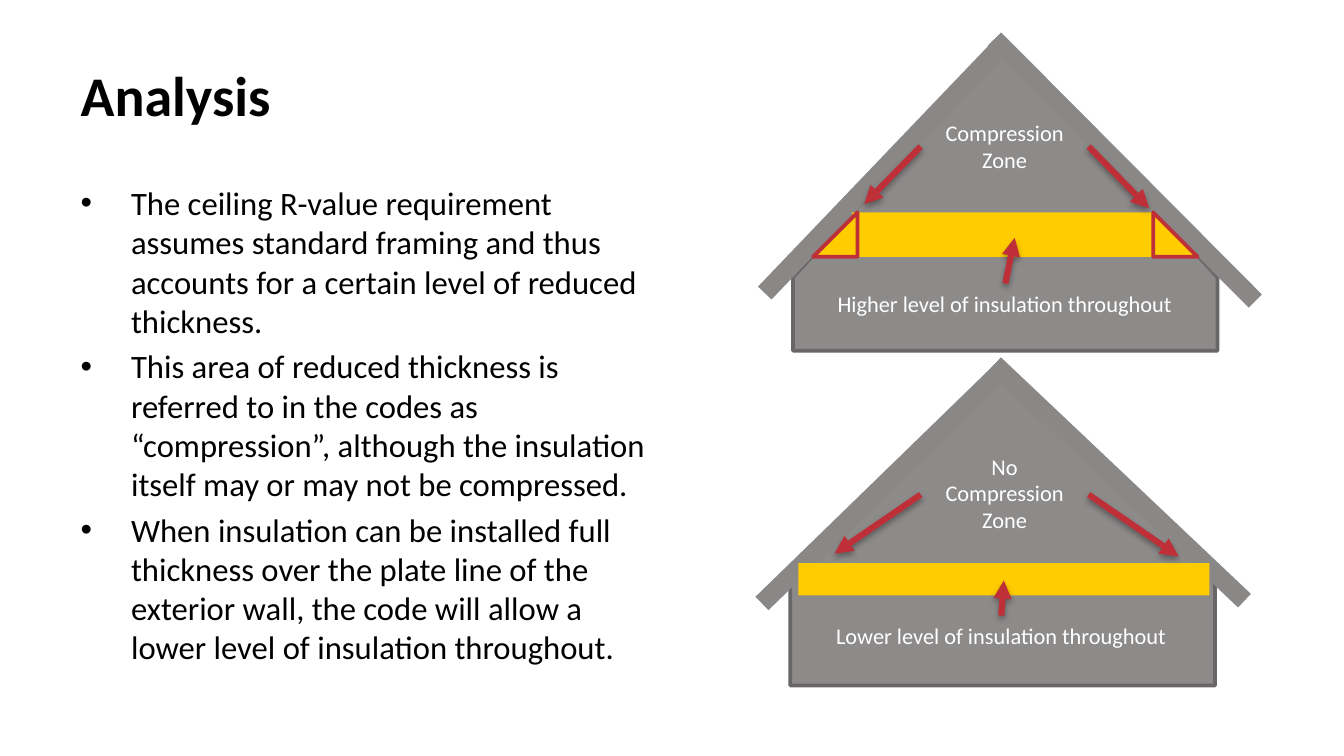
from lxml import etree
from pptx import Presentation
from pptx.dml.color import RGBColor
from pptx.enum import shapes, text
from pptx.oxml import parse_xml
from pptx.oxml.ns import nsdecls, qn
from pptx.util import Pt

rgb = RGBColor.from_string
BLACK, WHITE, WALL, WALL_EDGE = "000000", "FFFFFF", "8D8A8A", "686666"
ROOF, INSULATION, RED = "8A8787", "FFCC00", "BF2F38"

presentation = Presentation()
presentation.slide_width, presentation.slide_height = Pt(720), Pt(405)
slide = presentation.slides.add_slide(presentation.slide_layouts[1])


def add_shape(preset, box, fill, line=None):
    shape = slide.shapes.add_shape(preset, *map(Pt, box))
    shape.shadow.inherit = False
    shape.fill.solid()
    shape.fill.fore_color.rgb = rgb(fill)
    if line:
        shape.line.color.rgb = rgb(line)
        shape.line.width = Pt(2)
    else:
        shape.line.fill.background()
    return shape


def add_line(points, color, width, arrow=False):
    connector = slide.shapes.add_connector(
        shapes.MSO_CONNECTOR.STRAIGHT, *map(Pt, points))
    connector.line.color.rgb = rgb(color)
    connector.line.width = Pt(width)
    properties = connector._element.spPr
    if arrow:
        etree.SubElement(properties.find(qn("a:ln")), qn("a:tailEnd"), type="triangle")
        properties.append(parse_xml(
            f'<a:effectLst {nsdecls("a")}>'
            '<a:outerShdw blurRad="40000" dist="23000" dir="5400000" rotWithShape="0">'
            '<a:srgbClr val="000000"><a:alpha val="35000"/></a:srgbClr>'
            '</a:outerShdw></a:effectLst>'))
    else:
        etree.SubElement(properties, qn("a:effectLst"))


# Title
title = slide.shapes.title
title.left, title.top, title.width, title.height = map(Pt, (36, 16.5, 648, 67.5))
title.text_frame.text = "Analysis"
title.text_frame.vertical_anchor = text.MSO_ANCHOR.MIDDLE
paragraph = title.text_frame.paragraphs[0]
paragraph.alignment = text.PP_ALIGN.LEFT
font = paragraph.runs[0].font
font.name, font.size, font.bold = "Calibri", Pt(30), True
font.color.rgb = rgb(BLACK)

# Bulleted list
body = slide.placeholders[1]
body.left, body.top, body.width, body.height = map(Pt, (36, 94.5, 318, 267))
body.text_frame.text = "\n".join([
    "The ceiling R-value requirement assumes standard framing and thus "
    "accounts for a certain level of reduced thickness.",
    "This area of reduced thickness is referred to in the codes as "
    "“compression”, although the insulation itself may or may not be compressed.",
    "When insulation can be installed full thickness over the plate line of the "
    "exterior wall, the code will allow a lower level of insulation throughout.",
])
body.text_frame.auto_size = text.MSO_AUTO_SIZE.NONE
for index, paragraph in enumerate(body.text_frame.paragraphs):
    properties = paragraph._p.get_or_add_pPr()
    properties.set("marL", str(Pt(27)))
    properties.set("indent", str(-Pt(27)))
    etree.SubElement(properties, qn("a:buFont"), typeface="Arial")
    etree.SubElement(properties, qn("a:buChar"), char="•")
    paragraph.space_before = Pt(3.5 if index else 0)
    font = paragraph.runs[0].font
    font.name, font.size = "Calibri", Pt(17.5)
    font.color.rgb = rgb(BLACK)

# Houses, lower one first: walls, roof, insulation, corners, arrows, labels
houses = [
    {
        "walls": (455, 171.4, 164.2, 227.5), "point": 0.663,
        "roof": [(666.7, 321.8, 532.8, 195.1), (538.6, 196.6, 408.2, 323.3)],
        "insulation": (427.7, 301.7, 220.3, 17.3),
        "corners": [],
        "arrows": [(583.2, 265, 631.4, 298.1), (493.2, 265, 447.1, 296.6),
                   (536.4, 329.8, 537.8, 311)],
        "labels": [((493.2, 239, 90, 51.1), "No\nCompression Zone"),
                   ((437, 329.8, 198.7, 21.6), "Lower level of insulation throughout")],
    },
    {
        "walls": (457.2, -7.2, 162.7, 227.5), "point": 0.758,
        "roof": [(538.6, 22.3, 409.7, 157), (672.5, 161.3, 532.8, 20.9)],
        "insulation": (456.5, 113.8, 162, 23.8),
        "corners": [(617.8, 0), (435.6, 1)],
        "arrows": [(583.2, 78.5, 615.6, 111.6), (493.2, 78.5, 463, 109.4),
                   (538.6, 151.9, 543.6, 127.4)],
        "labels": [((493.2, 60.5, 90, 36), "Compression\nZone"),
                   ((430.6, 151.9, 215.3, 21.6), "Higher level of insulation throughout")],
    },
]
for house in houses:
    walls = add_shape(shapes.MSO_SHAPE.PENTAGON, house["walls"], WALL, WALL_EDGE)
    walls.adjustments[0] = house["point"]
    walls.rotation = 270
    for points in house["roof"]:
        add_line(points, ROOF, 10)
    add_shape(shapes.MSO_SHAPE.RECTANGLE, house["insulation"], INSULATION)
    for left, apex in house["corners"]:
        corner = add_shape(shapes.MSO_SHAPE.ISOSCELES_TRIANGLE,
                           (left, 113.8, 23.8, 23.8), INSULATION, RED)
        corner.adjustments[0] = apex
    for points in house["arrows"]:
        add_line(points, RED, 3.25, arrow=True)
    for box, words in house["labels"]:
        label = slide.shapes.add_textbox(*map(Pt, box))
        label.text_frame.word_wrap = True
        label.text_frame.auto_size = text.MSO_AUTO_SIZE.SHAPE_TO_FIT_TEXT
        label.text_frame.text = words
        for paragraph in label.text_frame.paragraphs:
            paragraph.alignment = text.PP_ALIGN.CENTER
            font = paragraph.runs[0].font
            font.name, font.size = "Calibri", Pt(12)
            font.color.rgb = rgb(WHITE)

# Thin edge under the upper roof
add_line((538.6, 25.2, 610.6, 97.2), ROOF, 0.75)

presentation.save("out.pptx")
